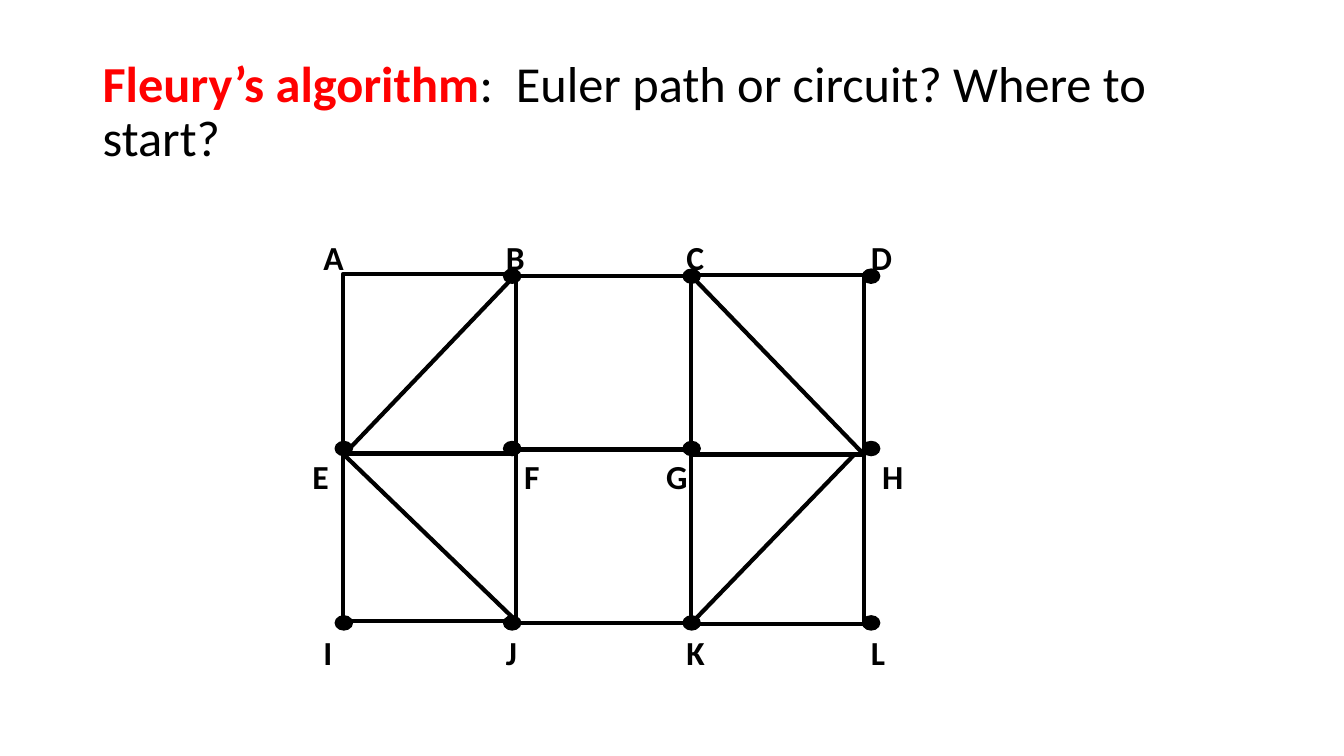
"""Build a slide that shows a twelve-vertex graph for Fleury's algorithm."""
from dataclasses import dataclass

from lxml.etree import SubElement
from pptx import Presentation
from pptx.dml.color import RGBColor
from pptx.enum.shapes import MSO_CONNECTOR as Connector, MSO_SHAPE as Preset
from pptx.enum.text import MSO_ANCHOR as Anchor
from pptx.oxml.ns import qn
from pptx.util import Emu, Inches, Pt


@dataclass(frozen=True)
class Theme:
    font: str = "Calibri"
    ink: str = "000000"
    accent: str = "FF0000"
    paper: str = "FFFFFF"
    title_size: int = 36
    label_size: int = 24
    edge_width: int = 3
    vertex_width: int = 1


THEME = Theme()
SLIDE_SIZE = (13.33, 7.5)

TITLE = [("Fleury’s algorithm", THEME.accent, True),
         (":  Euler path or circuit? Where to start?", THEME.ink, False)]
TITLE_BOX = (0.92, 0.4, 11.5, 1.45)

OUTER_LABELS = [("A\tB\tC\tD", (3.11, 2.3, 6.03, 0.52), (1.81, 3.6, 5.43)),
                ("I\tJ\tK\tL", (3.11, 6.22, 6.03, 0.52), (1.81, 3.6, 5.43))]
MIDDLE_LABELS = [("E\tF\tG\tH", (3.0, 4.47, 6.24, 0.5), (2.1, 3.51, 5.65))]

PANELS = [
    ((5.08, 6.86), [((4.46, 6.18), None), ((2.74, 4.46), None)]),
    ((3.4, 5.12), [((2.72, 4.52), "rising"), ((4.5, 6.16), "falling")]),
    ((6.85, 8.57), [((4.41, 6.19), "rising"), ((2.73, 4.51), "falling")]),
]

VERTEX_COLUMNS = (3.41, 5.08, 6.86, 8.64)
VERTEX_ROWS = [(2.74, VERTEX_COLUMNS[1:]), (4.45, VERTEX_COLUMNS), (6.18, VERTEX_COLUMNS)]
VERTEX_SIZE = (0.17, 0.14)


def color(code):
    return RGBColor.from_string(code)


def add_text(slide, runs, box, size, anchor=Anchor.TOP, spacing=1.0, tabs=()):
    frame = slide.shapes.add_textbox(*map(Inches, box)).text_frame
    frame.word_wrap = True
    frame.vertical_anchor = anchor
    paragraph = frame.paragraphs[0]
    paragraph.line_spacing = spacing
    for text, code, bold in runs:
        run = paragraph.add_run()
        run.text = text
        run.font.name = THEME.font
        run.font.size = Pt(size)
        run.font.bold = bold
        run.font.color.rgb = color(code)
    if tabs:
        tab_list = SubElement(paragraph._p.get_or_add_pPr(), qn("a:tabLst"))
        for stop in tabs:
            SubElement(tab_list, qn("a:tab"), pos=str(Inches(stop)), algn="l")


def add_labels(slide, rows):
    for text, box, tabs in rows:
        add_text(slide, [(text, THEME.ink, True)], box, THEME.label_size, tabs=tabs)


def add_outline(slide, preset, box, fill, width):
    shape = slide.shapes.add_shape(preset, *map(Inches, box))
    shape.shadow.inherit = False
    shape.fill.solid()
    shape.fill.fore_color.rgb = color(fill)
    shape.line.color.rgb = color(THEME.ink)
    shape.line.width = Pt(width)


def add_diagonal(slide, left, start, right, end):
    edge = slide.shapes.add_connector(Connector.STRAIGHT, *map(Inches, (left, start, right, end)))
    edge.line.color.rgb = color(THEME.ink)
    edge.line.width = Pt(THEME.edge_width)
    SubElement(edge._element.spPr, qn("a:effectLst"))


def add_panels(slide):
    for (left, right), cells in PANELS:
        for (top, bottom), diagonal in cells:
            box = (left, top, right - left, bottom - top)
            add_outline(slide, Preset.RECTANGLE, box, THEME.paper, THEME.edge_width)
            if diagonal:
                start, end = (bottom, top) if diagonal == "rising" else (top, bottom)
                add_diagonal(slide, left, start, right, end)


def add_vertices(slide):
    width, height = VERTEX_SIZE
    for row, columns in VERTEX_ROWS:
        for column in columns:
            box = (column - width / 2, row - height / 2, width, height)
            add_outline(slide, Preset.OVAL, box, THEME.ink, THEME.vertex_width)


def main():
    presentation = Presentation()
    presentation.slide_width, presentation.slide_height = (Emu(Inches(side)) for side in SLIDE_SIZE)
    slide = presentation.slides.add_slide(presentation.slide_layouts[6])
    add_text(slide, TITLE, TITLE_BOX, THEME.title_size, anchor=Anchor.MIDDLE, spacing=0.9)
    add_labels(slide, OUTER_LABELS)
    add_panels(slide)
    add_vertices(slide)
    add_labels(slide, MIDDLE_LABELS)
    presentation.save("out.pptx")


if __name__ == "__main__":
    main()
